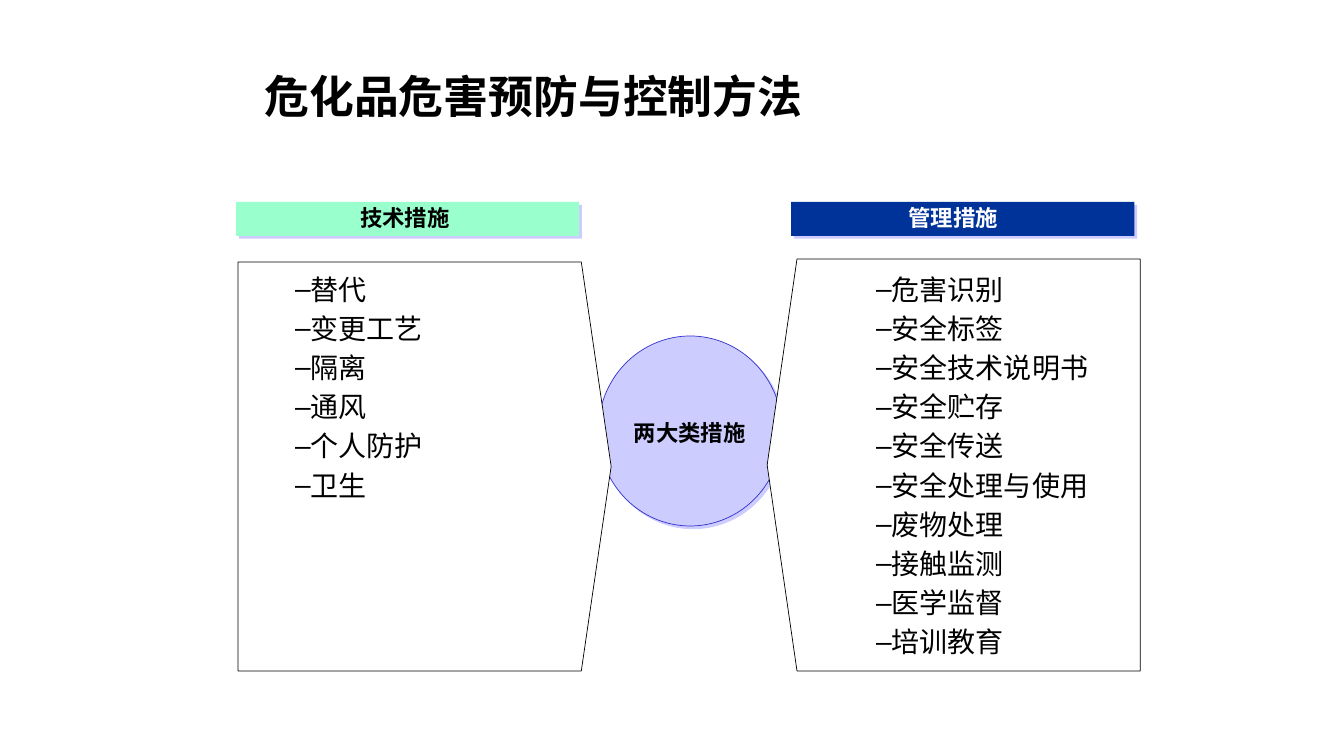
import pptx
import pptx.util
import pptx.dml.color
import pptx.enum.shapes
import pptx.enum.text
import pptx.oxml
import pptx.oxml.ns
import lxml.etree

PX = 914400 / 100.8
COLOURS = {
    "black": "000000", "white": "FFFFFF", "mint": "99FFCC",
    "navy": "003399", "lilac": "CCCCFF", "violet": "3333CC",
}
SHAPES = pptx.enum.shapes.MSO_SHAPE
ALIGN = pptx.enum.text.PP_ALIGN
ANCHOR = pptx.enum.text.MSO_ANCHOR
qn = pptx.oxml.ns.qn

deck = pptx.Presentation()
deck.slide_width = pptx.util.Inches(13.33)
deck.slide_height = pptx.util.Inches(7.5)
page = deck.slides.add_slide(deck.slide_layouts[3])
title, left_list, right_list = page.placeholders


def draw_shape(kind, place, fill, line=None, shadow=False):
    shape = page.shapes.add_shape(kind, *[round(length * PX) for length in place])
    shape.fill.solid()
    shape.fill.fore_color.rgb = pptx.dml.color.RGBColor.from_string(COLOURS[fill])
    if line:
        shape.line.color.rgb = pptx.dml.color.RGBColor.from_string(COLOURS[line])
        shape.line.width = pptx.util.Pt(0.5)
    else:
        shape.line.fill.background()
    shape.shadow.inherit = False
    if shadow:
        effects = shape.element.spPr.find(qn("a:effectLst"))
        outer = lxml.etree.SubElement(effects, qn("a:outerShdw"), dist="35921",
                                      dir="2700000", algn="ctr", rotWithShape="0")
        lxml.etree.SubElement(outer, qn("a:srgbClr"), val=COLOURS["lilac"])
    return shape


def write_text(box, place, lines, size, font, colour="black", bold=True, bullets=False):
    box.left, box.top, box.width, box.height = [round(length * PX) for length in place]
    frame = box.text_frame
    frame.margin_left = frame.margin_top = frame.margin_right = frame.margin_bottom = 0
    frame.word_wrap = True
    frame.auto_size = pptx.enum.text.MSO_AUTO_SIZE.SHAPE_TO_FIT_TEXT
    frame.vertical_anchor = ANCHOR.TOP if bullets else ANCHOR.MIDDLE
    for index, line in enumerate(lines):
        para = frame.add_paragraph() if index else frame.paragraphs[0]
        if bullets:
            para.level = 1
            properties = para._p.get_or_add_pPr()
            properties.set("marL", str(round(29 * PX)))
            properties.set("indent", str(round(21 * PX)))
            lxml.etree.SubElement(properties, qn("a:buChar"), char="–")
        para.alignment = ALIGN.LEFT if bullets else ALIGN.CENTER
        para.space_before = pptx.util.Pt(4 if index else 0)
        span = para.add_run()
        span.text = line
        span.font.size = pptx.util.Pt(size)
        span.font.name = font
        span.font.bold = bold
        span.font.color.rgb = pptx.dml.color.RGBColor.from_string(COLOURS[colour])


# Title
write_text(title, (236, 69, 595, 54), ["危化品危害预防与控制方法"], 32, "Times New Roman")

# Central circle, partly covered by the two panels
draw_shape(SHAPES.OVAL, (598, 336, 184, 190), "lilac", "violet", shadow=True)

# Both sides: panel, list, header bar
sides = [
    (left_list, (238, 262, 373, 409), 245, 236, "mint", 259, "技术措施", "black",
     ["替代", "变更工艺", "隔离", "通风", "个人防护", "卫生"]),
    (right_list, (767, 259, 373, 412), 826, 791, "navy", 807, "管理措施", "white",
     ["危害识别", "安全标签", "安全技术说明书", "安全贮存", "安全传送",
      "安全处理与使用", "废物处理", "接触监测", "医学监督", "培训教育"]),
]
for (body, panel_place, list_left, bar_left, bar_fill,
     label_left, label, label_colour, measures) in sides:
    panel = draw_shape(SHAPES.PENTAGON, panel_place, "white", "black")
    panel.adjustments[0] = 0.08
    if body is right_list:
        panel.element.spPr.xfrm.set("flipH", "1")

    # The list goes in front of its panel
    body.element.getparent().append(body.element)
    write_text(body, (list_left, 272, 320, 40 * len(measures)), measures, 20,
               "Times New Roman", bold=False, bullets=True)

    draw_shape(SHAPES.RECTANGLE, (bar_left, 202, 343, 34), bar_fill, shadow=True)
    write_text(page.shapes.add_textbox(0, 0, 0, 0), (label_left, 204, 292, 27),
               [label], 16, "Arial", label_colour)

# Circle label
write_text(page.shapes.add_textbox(0, 0, 0, 0), (619, 419, 141, 27),
           ["两大类措施"], 16, "Arial")

deck.save("out.pptx")
